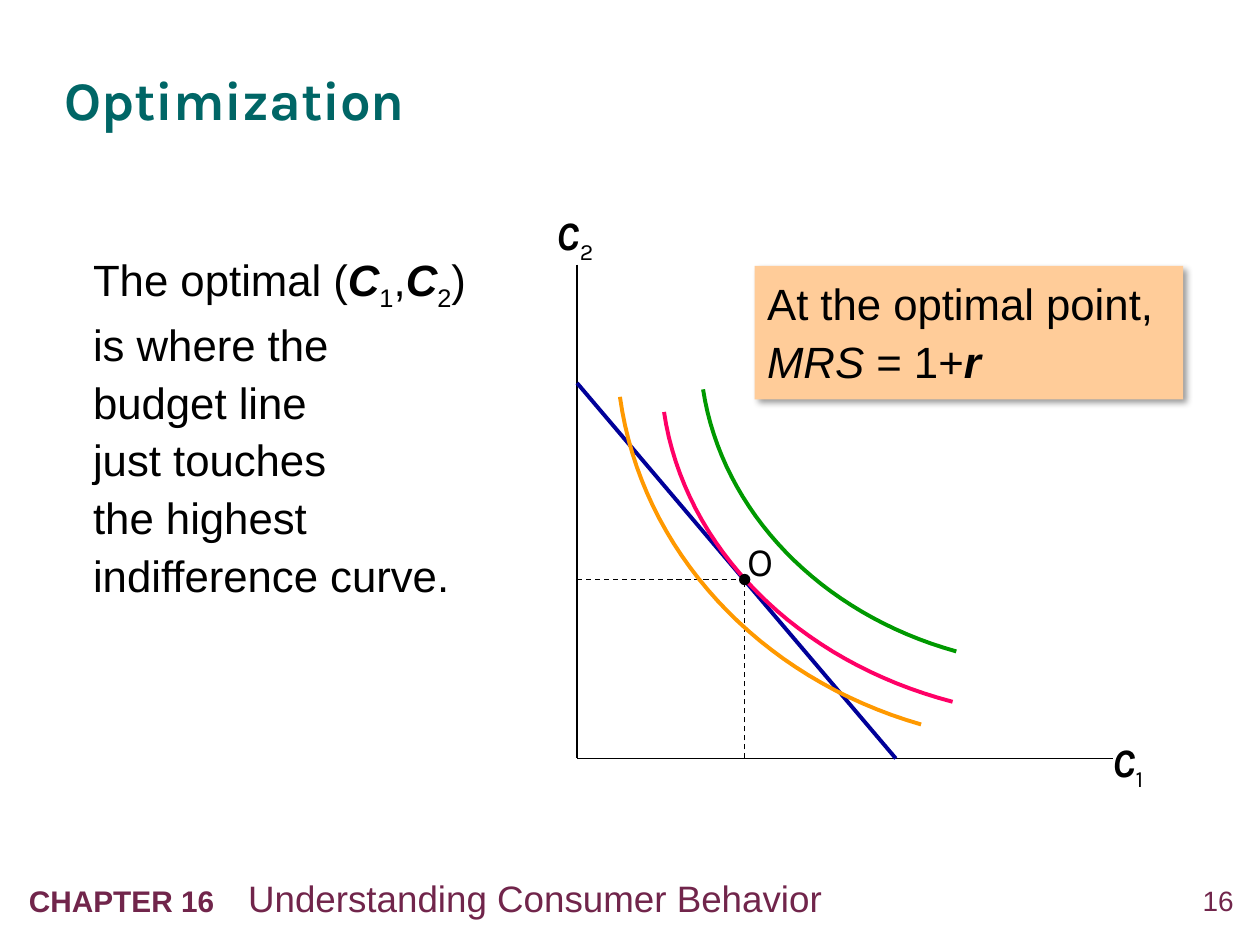
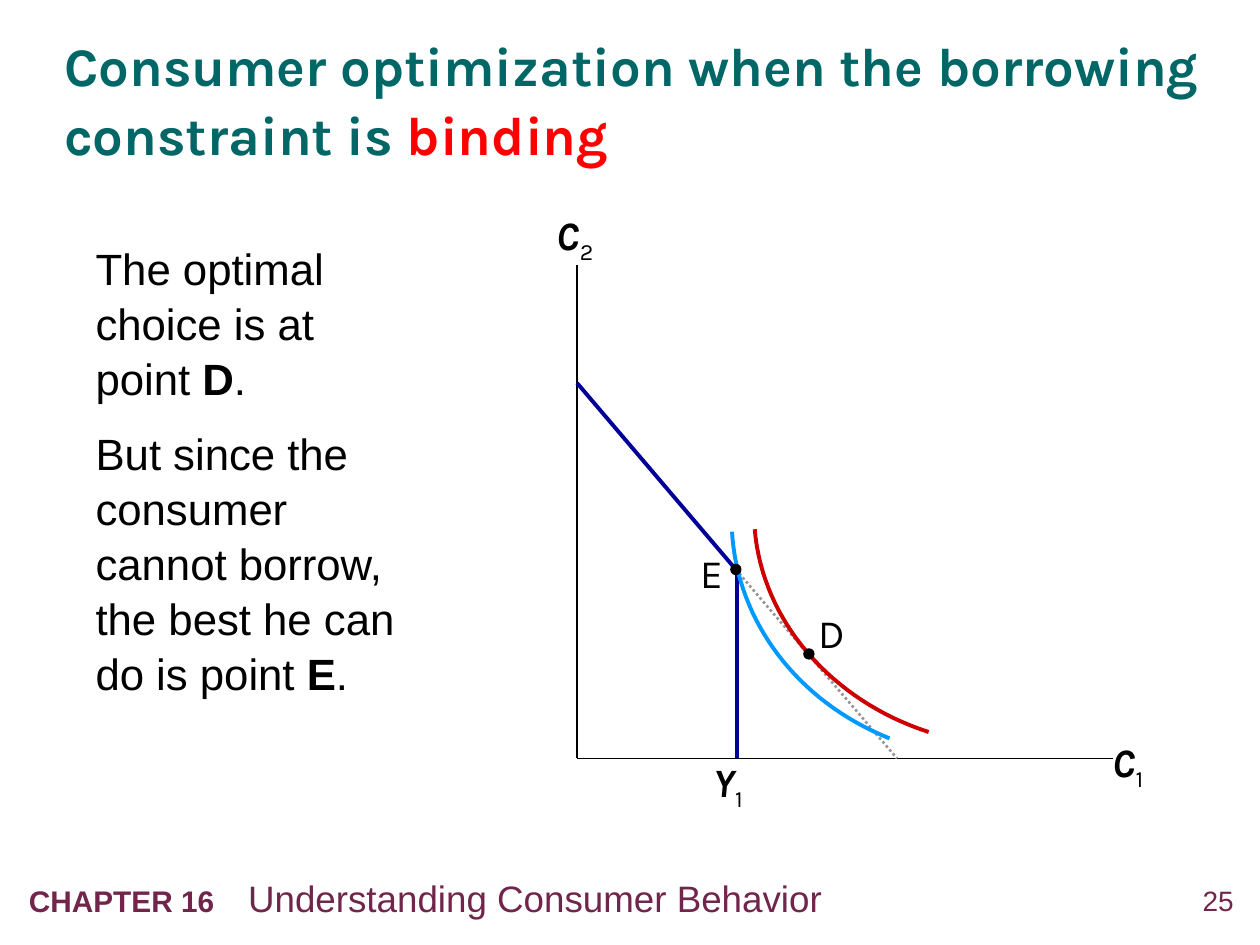
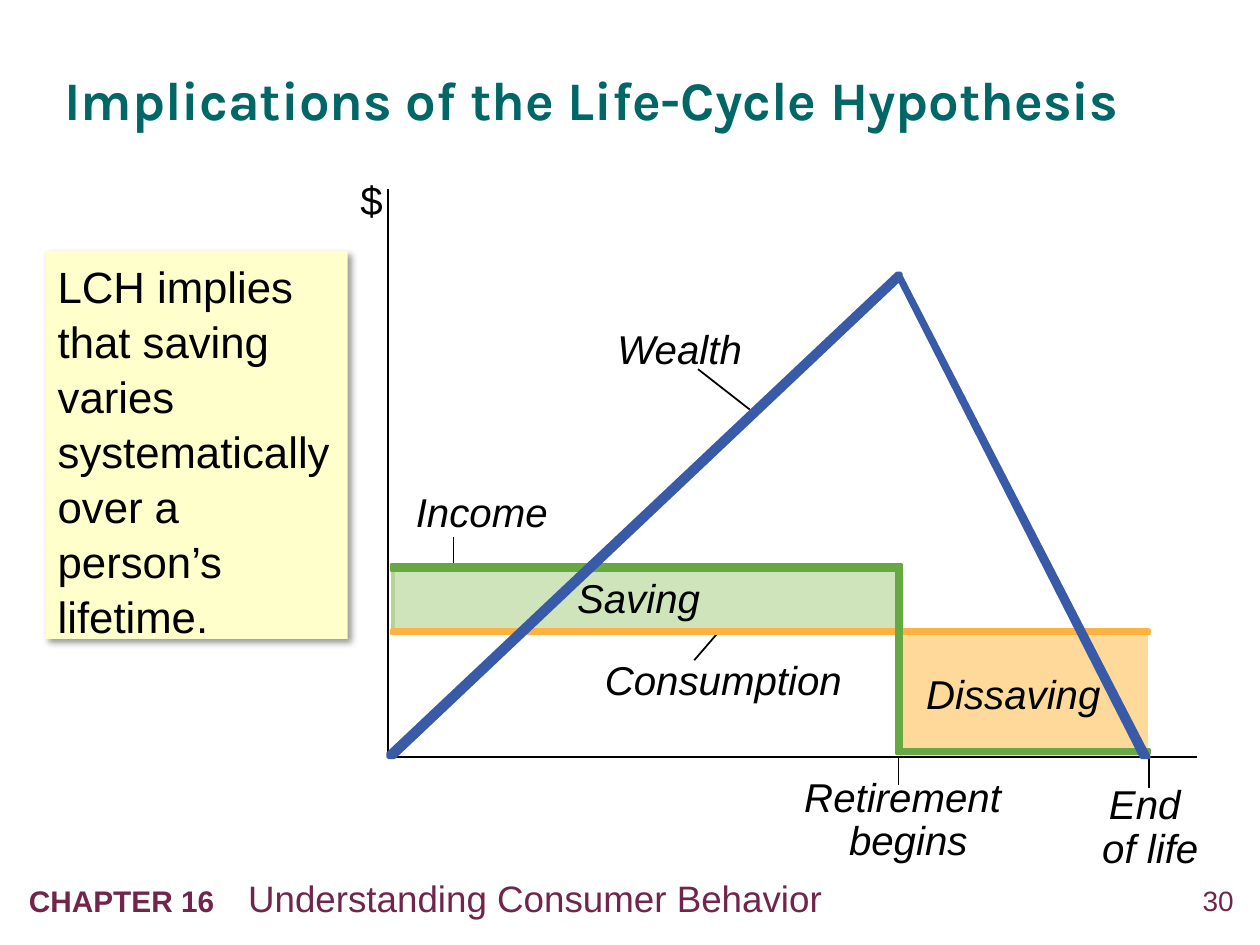
from lxml.etree import SubElement
from pptx import Presentation
from pptx.dml.color import RGBColor as RGB
from pptx.enum.dml import MSO_LINE as DASH
from pptx.enum.shapes import MSO_CONNECTOR as CONN, MSO_SHAPE as SHAPE
from pptx.enum.text import MSO_ANCHOR as ANCHOR, PP_ALIGN as ALIGN
from pptx.oxml.ns import qn
from pptx.util import Inches, Pt

WIDTH, HEIGHT = Inches(10), Inches(7.5)
UNIT = WIDTH / 100  # the grid has 100 columns and 75 rows of square cells

BLACK = RGB(0x00, 0x00, 0x00)
TEAL = RGB(0x00, 0x66, 0x66)
RED = RGB(0xFF, 0x00, 0x00)
PLUM = RGB(0x71, 0x25, 0x4B)
NAVY = RGB(0x00, 0x00, 0x99)
PINK = RGB(0xFF, 0x00, 0x66)
GREEN = RGB(0x00, 0x99, 0x00)
ORANGE = RGB(0xFF, 0x99, 0x00)
CRIMSON = RGB(0xCC, 0x00, 0x00)
SKY = RGB(0x00, 0x99, 0xFF)
GREY = RGB(0x96, 0x96, 0x96)
PEACH = RGB(0xFF, 0xCC, 0x99)
CREAM = RGB(0xFF, 0xFF, 0xCC)
SAVING = RGB(0xB3, 0xD4, 0x92)
DISSAVING = RGB(0xFE, 0xD9, 0x9A)
CONSUMPTION = RGB(0xFE, 0xB3, 0x41)
INCOME = RGB(0x66, 0xA8, 0x42)
WEALTH = RGB(0x39, 0x5A, 0xA7)

SANS, DISPLAY = "Arial", "Karla"
BODY_SIZE, LABEL_SIZE = 25, 23
ORIGIN_X, ORIGIN_Y = 45.8, 60.2
BUDGET_TOP = 30.4


def cells(*values):
    """Turn grid cells into lengths."""
    return [round(v * UNIT) for v in values]


def add_run(p, text, size, font, color, style=""):
    """Add a run; style letters: b bold, i italic, s subscript."""
    for n, line in enumerate(text.split("\n")):
        if n:
            p.add_line_break()
        r = p.add_run()
        r.text = line
        r.font.size, r.font.name = Pt(size), font
        r.font.bold, r.font.italic = "b" in style, "i" in style
        r.font.color.rgb = color
        if "s" in style:
            r.font._element.set("baseline", "-25000")


def write(sp, paragraphs, size, font=SANS, color=BLACK, spacing=1.0,
          align=ALIGN.LEFT, anchor=ANCHOR.TOP, inset=(0, 0)):
    """Fill a shape with paragraphs, each a list of (text, style) runs."""
    tf = sp.text_frame
    tf.word_wrap = True
    tf.vertical_anchor = anchor
    tf.margin_left, tf.margin_top = cells(*inset)
    tf.margin_right, tf.margin_bottom = cells(*inset)
    for n, runs in enumerate(paragraphs):
        p = tf.add_paragraph() if n else tf.paragraphs[0]
        p.alignment, p.line_spacing = align, spacing
        if n:
            p.space_before = Pt(0.45 * size)
        for text, style in runs:
            add_run(p, text, size, font, color, style)
    return tf


def add_text(slide, box, paragraphs, size, **look):
    return write(slide.shapes.add_textbox(*cells(*box)), paragraphs, size, **look)


def add_label(slide, text, box, style="i", **look):
    add_text(slide, box, [[(text, style)]], LABEL_SIZE, **look)


def add_symbol(slide, letter, index, x, y):
    """Label a quantity with a letter and its subscript."""
    add_text(slide, (x, y, 4.2, 4.3), [[(letter, "bi"), (index, "s")]],
             LABEL_SIZE, font=DISPLAY)


def add_point_name(slide, name, x, y):
    add_label(slide, name, (x, y, 3, 4), style="", font=DISPLAY)


def add_line(slide, start, end, color=BLACK, width=1, dash=None):
    cx = slide.shapes.add_connector(CONN.STRAIGHT, *cells(*start, *end))
    cx.line.color.rgb, cx.line.width = color, Pt(width)
    if dash:
        cx.line.dash_style = dash
    SubElement(cx._element.spPr, qn("a:effectLst"))


def paint(sp, fill=None, line=None, width=2):
    sp.shadow.inherit = False
    if fill is None:
        sp.fill.background()
    else:
        sp.fill.solid()
        sp.fill.fore_color.rgb = fill
    if line is None:
        sp.line.fill.background()
    else:
        sp.line.color.rgb, sp.line.width = line, Pt(width)


def add_block(slide, box, fill, line=None, kind=SHAPE.RECTANGLE, width=2):
    sp = slide.shapes.add_shape(kind, *cells(*box))
    paint(sp, fill, line, width)
    return sp


def add_dot(slide, x, y, size=0.8):
    add_block(slide, (x - size / 2, y - size / 2, size, size), BLACK, BLACK,
              SHAPE.OVAL, 0.75)


def add_outline(slide, points, color, width=2, filled=False):
    """Draw an open path, or a closed filled one."""
    points = [cells(*pt) for pt in points]
    builder = slide.shapes.build_freeform(*points[0])
    builder.add_line_segments(points[1:], close=filled)
    paint(builder.convert_to_shape(), color if filled else None, color, width)


def add_curve(slide, ends, controls, color, steps=32):
    """Draw an indifference curve as a cubic between two ends."""
    knots = (ends[0], *controls, ends[1])
    points = []
    for n in range(steps + 1):
        t = n / steps
        weights = ((1 - t) ** 3, 3 * t * (1 - t) ** 2, 3 * t * t * (1 - t), t ** 3)
        points.append([sum(w * k[axis] for w, k in zip(weights, knots))
                       for axis in (0, 1)])
    add_outline(slide, points, color, 2.25)


def add_note(slide, box, runs, fill, spacing):
    """Add a filled text panel with a soft drop shadow."""
    sp = add_block(slide, box, fill)
    shadow = SubElement(sp._element.spPr.find(qn("a:effectLst")), qn("a:outerShdw"),
                        blurRad=str(Pt(4)), dist=str(Pt(3)), dir=str(45 * 60000),
                        algn="tl", rotWithShape="0")
    color = SubElement(shadow, qn("a:srgbClr"), val=str(BLACK))
    SubElement(color, qn("a:alpha"), val="40000")
    write(sp, [runs], BODY_SIZE, spacing=spacing, inset=(1, 0.5))


def add_body(slide, box, paragraphs, spacing):
    add_text(slide, box, paragraphs, BODY_SIZE, spacing=spacing, inset=(1, 0.5))


def start_slide(prs, number, title, highlight=""):
    """Add a slide with its footer, number and title."""
    slide = prs.slides.add_slide(prs.slide_layouts[6])
    add_text(slide, (92.4, 70.1, 5.5, 3.2), [[(number, "")]], 16,
             color=PLUM, align=ALIGN.RIGHT)
    footer = add_text(slide, (1.3, 69, 81.8, 4.5), [[("CHAPTER 16\t", "b")]], 17,
                      color=PLUM, inset=(1, 0.5)).paragraphs[0]
    add_run(footer, "Understanding Consumer Behavior", 21, SANS, PLUM)
    tabs = SubElement(footer._p.get_or_add_pPr(), qn("a:tabLst"))
    SubElement(tabs, qn("a:tab"), pos=str(Inches(1.74)), algn="l")
    heading = add_text(slide, (5.1, 2.6, 90.2, 10.3), [[(title, "b")]], 31, font=DISPLAY,
                       color=TEAL, spacing=1.05, anchor=ANCHOR.MIDDLE).paragraphs[0]
    if highlight:
        add_run(heading, highlight, 31, DISPLAY, RED, "b")
    return slide


def add_consumption_axes(slide):
    add_line(slide, (ORIGIN_X, 21), (ORIGIN_X, ORIGIN_Y))
    add_line(slide, (ORIGIN_X, ORIGIN_Y), (88.3, ORIGIN_Y))
    add_symbol(slide, "C", "1", 88.3, 58.5)
    add_symbol(slide, "C", "2", 44.2, 16.7)


def build_optimization(prs):
    slide = start_slide(prs, "16", "Optimization")
    add_body(slide, (6.4, 19.1, 34.2, 36.9), [[
        ("The optimal (", ""), ("C", "bi"), ("1", "s"), (",", ""), ("C", "bi"), ("2", "s"),
        (") is where the \nbudget line \njust touches \n"
         "the highest indifference curve.", "")]], 1.1)
    add_consumption_axes(slide)
    add_line(slide, (ORIGIN_X, BUDGET_TOP), (71.1, ORIGIN_Y), NAVY, 2.25)
    optimum = (59.1, 46)
    for foot in ((optimum[0], ORIGIN_Y), (ORIGIN_X, optimum[1])):
        add_line(slide, foot, optimum, width=0.75, dash=DASH.DASH)
    add_curve(slide, ((75.6, 55.7), (52.7, 32.7)), ((63.3, 52.5), (54.3, 43.5)), PINK)
    add_curve(slide, ((75.9, 51.7), (55.8, 30.9)), ((65.1, 48.7), (57.3, 40.6)), GREEN)
    add_curve(slide, ((73.1, 57.5), (49.2, 31.5)), ((60.2, 53.8), (50.9, 43.7)), ORANGE)
    add_point_name(slide, "O", 59.3, 42.6)
    add_dot(slide, *optimum)
    add_note(slide, (59.9, 21.1, 34, 10.6), [
        ("At the optimal point, ", ""), ("MRS", "i"), (" = 1+", ""), ("r", "bi")], PEACH, 1.1)


def build_binding_constraint(prs):
    slide = start_slide(
        prs, "25", "Consumer optimization when the borrowing constraint is ", "binding")
    add_body(slide, (6.6, 18.5, 27.5, 39.4), [
        [("The optimal choice is at point ", ""), ("D", "b"), (".", "")],
        [("But since the consumer cannot borrow, the best he can do is point ", ""),
         ("E", "b"), (".", "")]], 1.05)
    add_consumption_axes(slide)
    endowment, desired = (58.4, 45.2), (64.2, 51.9)
    income_x = 58.5
    add_line(slide, (ORIGIN_X, BUDGET_TOP), endowment, NAVY, 2.25)
    add_symbol(slide, "Y", "1", 56.6, 60.1)
    add_line(slide, endowment, (71.2, ORIGIN_Y), GREY, 1.5, DASH.ROUND_DOT)
    add_line(slide, (income_x, endowment[1]), (income_x, ORIGIN_Y), NAVY, 2.25)
    add_curve(slide, ((73.7, 58.1), (59.9, 42)), ((66, 55.6), (60.5, 49.3)), CRIMSON)
    add_dot(slide, *desired)
    add_curve(slide, ((70.6, 58.6), (58.1, 42.2)), ((63.3, 55.7), (58.5, 49.3)), SKY)
    add_dot(slide, *endowment)
    add_point_name(slide, "D", 65, 48.3)
    add_point_name(slide, "E", 55.6, 43.5)


def build_life_cycle(prs):
    slide = start_slide(prs, "30", "Implications of the Life-Cycle Hypothesis")
    add_note(slide, (3.6, 19.9, 24, 30.8), [
        ("LCH implies that saving varies systematically over a person’s lifetime.", "")],
        CREAM, 1.05)
    birth, retire, death, base = 30.8, 71.5, 91.2, 60.1

    saving = add_block(slide, (31.2, 45.2, 40.2, 4.9), SAVING, SAVING)
    tint = saving._element.spPr.find(qn("a:solidFill")).find(qn("a:srgbClr"))
    SubElement(tint, qn("a:alpha"), val="62000")
    add_label(slide, "Saving", (45.8, 45.5, 10, 3.9))
    add_block(slide, (71.6, 50.4, 19.4, 9.6), DISSAVING, DISSAVING)
    add_label(slide, "Dissaving", (73.5, 53.1, 14, 3.9))

    add_label(slide, "Retirement \nbegins", (63.8, 61.7, 16.6, 7),
              align=ALIGN.CENTER, spacing=0.9)
    add_line(slide, (71.3, 62.3), (71.3, base), width=0.75)
    add_label(slide, "End \nof life", (86.7, 62.3, 9.2, 6.9),
              align=ALIGN.CENTER, spacing=0.9)
    add_line(slide, (death, 62.5), (death, base))

    add_label(slide, "Consumption", (48, 52, 19, 3.9))
    add_line(slide, (55.1, 52.4), (57, 50.2))
    add_block(slide, (31.1, 50, 60.1, 0.3), CONSUMPTION, CONSUMPTION)

    add_label(slide, "Income", (33, 38.7, 10.6, 3.9))
    add_line(slide, (36, 45), (36, 42.6))
    add_outline(slide, [
        (retire, 59.5), (retire, 44.8), (31.1, 44.8), (31.1, 45.3), (71.2, 45.3),
        (71.2, 59.8), (death, 59.8), (death, 59.5)], INCOME, filled=True)

    add_label(slide, "$", (28.6, 13.9, 2, 3.9), style="")
    add_outline(slide, [(birth, 15), (birth, base), (95, base)], BLACK, 1)

    add_label(slide, "Wealth", (49, 25.7, 10.2, 3.9))
    add_outline(slide, [
        (birth, base), (31.3, base), (retire, 22.1), (71.2, 21.9), (90.6, base),
        (death, base), (retire, 21.9), (retire, 21.7), (71.2, 21.7), (birth, 59.8)],
        WEALTH, filled=True)
    add_line(slide, (59.5, 32.5), (55.4, 29.3))


def main():
    prs = Presentation()
    prs.slide_width, prs.slide_height = WIDTH, HEIGHT
    build_optimization(prs)
    build_binding_constraint(prs)
    build_life_cycle(prs)
    prs.save("out.pptx")


if __name__ == "__main__":
    main()
